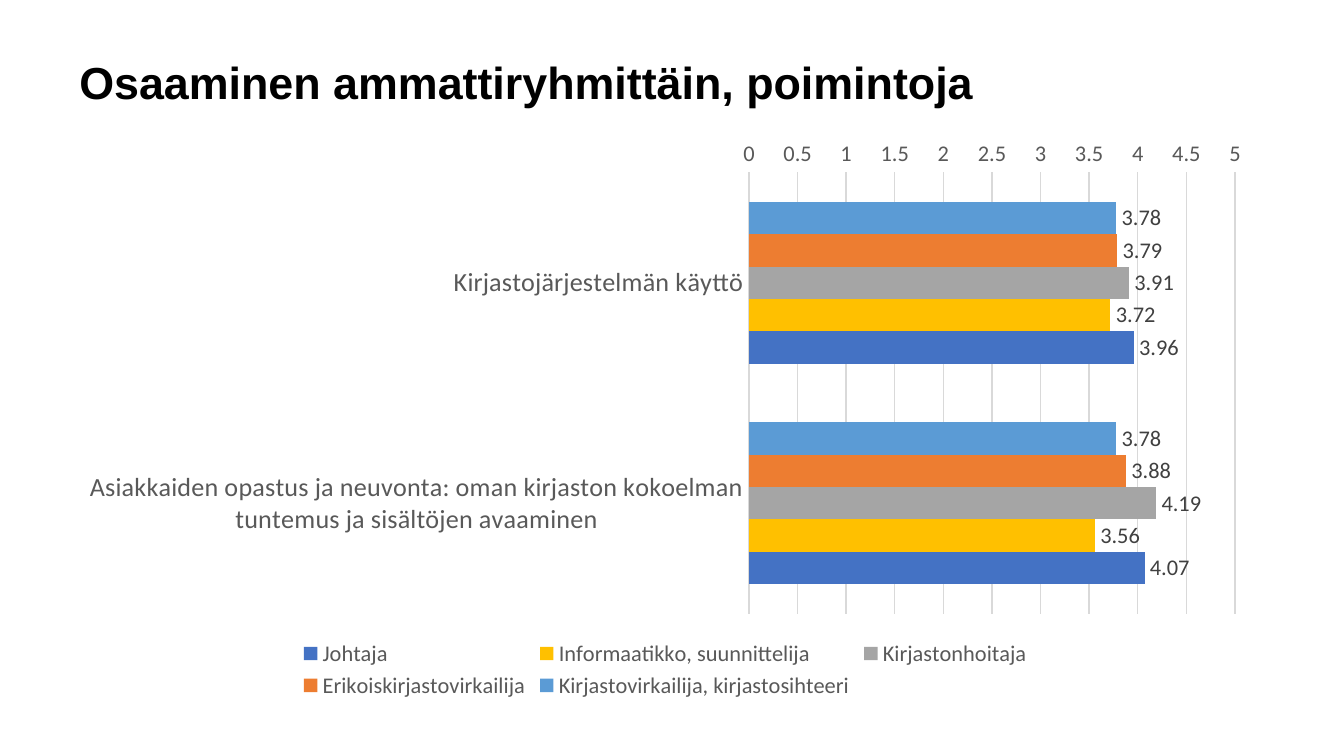
from dataclasses import dataclass

from pptx import Presentation
from pptx.chart.data import CategoryChartData
from pptx.dml.color import RGBColor
from pptx.enum.chart import XL_CHART_TYPE, XL_LABEL_POSITION, XL_LEGEND_POSITION, XL_TICK_MARK
from pptx.enum.text import MSO_ANCHOR, PP_ALIGN
from pptx.util import Inches, Pt

BAR_CLUSTERED = XL_CHART_TYPE.BAR_CLUSTERED
OUTSIDE_END = XL_LABEL_POSITION.OUTSIDE_END
LEGEND_BOTTOM = XL_LEGEND_POSITION.BOTTOM
NO_TICKS = XL_TICK_MARK.NONE
MIDDLE = MSO_ANCHOR.MIDDLE
LEFT = PP_ALIGN.LEFT


@dataclass(frozen=True)
class Theme:
    title_font: str = "Arial"
    chart_font: str = "Calibri"
    title_size: int = 24
    category_size: int = 14
    chart_size: int = 12
    title_color: str = "000000"
    axis_color: str = "595959"
    label_color: str = "404040"
    grid_color: str = "D9D9D9"
    grid_width: float = 0.75


theme = Theme()

CATEGORIES = [
    "Kirjastojärjestelmän käyttö",
    "Asiakkaiden opastus ja neuvonta: oman kirjaston kokoelman tuntemus ja sisältöjen avaaminen",
]
PROFESSIONS = [
    ("Kirjastovirkailija, kirjastosihteeri", (3.78, 3.78), "5B9BD5"),
    ("Erikoiskirjastovirkailija", (3.79, 3.88), "ED7D31"),
    ("Kirjastonhoitaja", (3.91, 4.19), "A5A5A5"),
    ("Informaatikko, suunnittelija", (3.72, 3.56), "FFC000"),
    ("Johtaja", (3.96, 4.07), "4472C4"),
]


def style_font(font, name, size, color, bold=False):
    font.name = name
    font.size = Pt(size)
    font.bold = bold
    font.color.rgb = RGBColor.from_string(color)


def style_line(line):
    line.color.rgb = RGBColor.from_string(theme.grid_color)
    line.width = Pt(theme.grid_width)


presentation = Presentation()
presentation.slide_width = Inches(10)
presentation.slide_height = presentation.slide_width * 9 // 16
slide = presentation.slides.add_slide(presentation.slide_layouts.get_by_name("Title Only"))

# Title and chart share the left margin; the chart starts where the title ends
margin = Inches(0.49)
title_top, title_height = Inches(0.3), Inches(0.66)

title = slide.shapes.title
title.left, title.top = margin, title_top
title.width, title.height = Inches(9.09), title_height
title.text_frame.text = "Osaaminen ammattiryhmittäin, poimintoja"
title.text_frame.vertical_anchor = MIDDLE
paragraph = title.text_frame.paragraphs[0]
paragraph.alignment = LEFT
paragraph.line_spacing = 0.9
style_font(paragraph.runs[0].font, theme.title_font, theme.title_size, theme.title_color, bold=True)

chart_data = CategoryChartData()
chart_data.categories = CATEGORIES
for name, values, color in PROFESSIONS:
    chart_data.add_series(name, values)
chart = slide.shapes.add_chart(
    BAR_CLUSTERED, margin, title_top + title_height, Inches(8.92), Inches(4.28), chart_data
).chart
style_font(chart.font, theme.chart_font, theme.chart_size, theme.title_color)
chart.has_title = False

chart.has_legend = True
chart.legend.position = LEGEND_BOTTOM
chart.legend.include_in_layout = False
style_font(chart.legend.font, theme.chart_font, theme.chart_size, theme.axis_color)

category_axis, value_axis = chart.category_axis, chart.value_axis
for axis, size in ((category_axis, theme.category_size), (value_axis, theme.chart_size)):
    axis.major_tick_mark = NO_TICKS
    axis.minor_tick_mark = NO_TICKS
    style_font(axis.tick_labels.font, theme.chart_font, size, theme.axis_color)

category_axis.reverse_order = True
style_line(category_axis.format.line)

value_axis.minimum_scale = 0
value_axis.maximum_scale = 5
value_axis.major_unit = 0.5
value_axis.format.line.fill.background()
value_axis.has_major_gridlines = True
style_line(value_axis.major_gridlines.format.line)

plot = chart.plots[0]
plot.gap_width = 182
plot.overlap = 0
plot.vary_by_categories = False
for series, (name, values, color) in zip(plot.series, PROFESSIONS):
    series.format.fill.solid()
    series.format.fill.fore_color.rgb = RGBColor.from_string(color)
    labels = series.data_labels
    labels.show_value = True
    labels.position = OUTSIDE_END
    style_font(labels.font, theme.chart_font, theme.chart_size, theme.label_color)

presentation.save("out.pptx")
